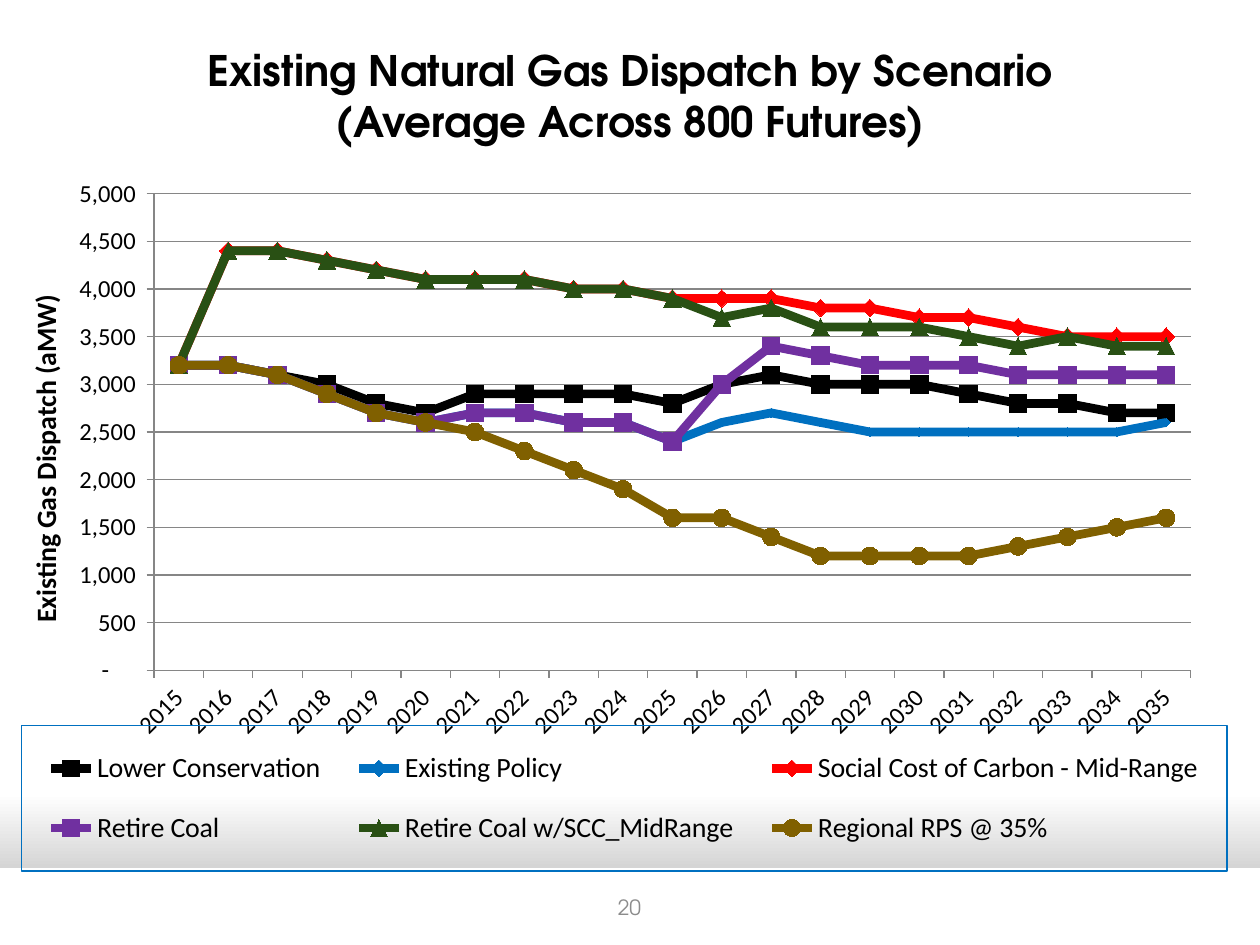
from dataclasses import dataclass

from lxml.etree import SubElement
from pptx import Presentation
from pptx.chart.chart import Chart
from pptx.chart.data import CategoryChartData
from pptx.dml.color import RGBColor
from pptx.enum.chart import XL_CHART_TYPE, XL_LEGEND_POSITION, XL_MARKER_STYLE, XL_TICK_MARK
from pptx.enum.shapes import MSO_SHAPE
from pptx.enum.text import MSO_ANCHOR, PP_ALIGN
from pptx.oxml import parse_xml
from pptx.oxml.ns import nsdecls, qn
from pptx.slide import Slide
from pptx.util import Cm, Pt

BLACK = RGBColor(0x00, 0x00, 0x00)
WHITE = RGBColor(0xFF, 0xFF, 0xFF)
BLUE = RGBColor(0x00, 0x70, 0xC0)
RED = RGBColor(0xFF, 0x00, 0x00)
PURPLE = RGBColor(0x70, 0x30, 0xA0)
GREEN = RGBColor(0x29, 0x50, 0x14)
BROWN = RGBColor(0x80, 0x60, 0x00)
GRID_GRAY = RGBColor(0x86, 0x86, 0x86)
NUMBER_GRAY = RGBColor(0x8C, 0x8C, 0x8C)
SHADE_GRAY = RGBColor(0xA6, 0xA6, 0xA6)

HEADING_FONT = "TeX Gyre Adventor"
CHART_FONT = "Calibri"
TITLE_LINES = ("Existing Natural Gas Dispatch by Scenario", "(Average Across 800 Futures)")
YEARS = range(2015, 2036)
DISPATCH_FORMAT = '_(* #,##0_);_(* \\(#,##0\\);_(* "-"??_);_('


@dataclass(frozen=True)
class Scenario:
    name: str
    color: RGBColor
    marker: XL_MARKER_STYLE
    hundreds: tuple[int, ...]  # dispatch in hundreds of aMW
    marker_size: int = 10


SCENARIOS = (
    Scenario("Lower Conservation", BLACK, XL_MARKER_STYLE.SQUARE,
             (32, 32, 31, 30, 28, 27, 29, 29, 29, 29, 28, 30, 31, 30, 30, 30, 29, 28, 28, 27, 27)),
    Scenario("Existing Policy", BLUE, XL_MARKER_STYLE.DIAMOND,
             (32, 32, 31, 29, 27, 26, 27, 27, 26, 26, 24, 26, 27, 26, 25, 25, 25, 25, 25, 25, 26),
             marker_size=5),
    Scenario("Social Cost of Carbon - Mid-Range", RED, XL_MARKER_STYLE.DIAMOND,
             (32, 44, 44, 43, 42, 41, 41, 41, 40, 40, 39, 39, 39, 38, 38, 37, 37, 36, 35, 35, 35)),
    Scenario("Retire Coal", PURPLE, XL_MARKER_STYLE.SQUARE,
             (32, 32, 31, 29, 27, 26, 27, 27, 26, 26, 24, 30, 34, 33, 32, 32, 32, 31, 31, 31, 31)),
    Scenario("Retire Coal w/SCC_MidRange", GREEN, XL_MARKER_STYLE.TRIANGLE,
             (32, 44, 44, 43, 42, 41, 41, 41, 40, 40, 39, 37, 38, 36, 36, 36, 35, 34, 35, 34, 34)),
    Scenario("Regional RPS @ 35%", BROWN, XL_MARKER_STYLE.CIRCLE,
             (32, 32, 31, 29, 27, 26, 25, 23, 21, 19, 16, 16, 14, 12, 12, 12, 12, 13, 14, 15, 16)),
)


def set_background(slide: Slide) -> None:
    fill = slide.background.fill
    fill.gradient()
    fill.gradient_angle = 270
    for stop, position, color in zip(fill.gradient_stops, (0.84, 1), (WHITE, SHADE_GRAY)):
        stop.position = position
        stop.color.rgb = color


def add_footer_band(slide: Slide) -> None:
    band = slide.shapes.add_shape(MSO_SHAPE.RECTANGLE, Cm(0), Cm(17.5), Cm(25.4), Cm(1.55))
    band.shadow.inherit = False
    band.fill.solid()
    band.fill.fore_color.rgb = WHITE
    band.line.fill.background()


def write_text(shape, lines: tuple[str, ...], size: int, color: RGBColor, bold: bool) -> None:
    """Write centred lines, one run each, parted by line breaks."""
    frame = shape.text_frame
    frame.word_wrap = True
    frame.vertical_anchor = MSO_ANCHOR.MIDDLE
    paragraph = frame.paragraphs[0]
    paragraph.alignment = PP_ALIGN.CENTER
    for index, line in enumerate(lines):
        if index:
            paragraph.add_line_break()
        run = paragraph.add_run()
        run.text = line
        run.font.name = HEADING_FONT
        run.font.size = Pt(size)
        run.font.bold = bold
        run.font.color.rgb = color


def manual_layout(x: float, y: float, width: float, height: float, inner: bool = False):
    """Return a c:layout element with fractions of the chart area."""
    layout = parse_xml(f"<c:layout {nsdecls('c')}><c:manualLayout/></c:layout>")
    settings = {"layoutTarget": "inner"} if inner else {}
    settings |= {"xMode": "edge", "yMode": "edge", "x": x, "y": y, "w": width, "h": height}
    for tag, value in settings.items():
        SubElement(layout[0], qn(f"c:{tag}")).set("val", str(value))
    return layout


def replace_layout(parent, layout, index: int) -> None:
    for old in parent.findall(qn("c:layout")):
        parent.remove(old)
    parent.insert(index, layout)


def format_axes(chart: Chart) -> None:
    for axis in (chart.category_axis, chart.value_axis):
        axis.major_tick_mark = XL_TICK_MARK.OUTSIDE
        axis.minor_tick_mark = XL_TICK_MARK.NONE
        axis.format.line.color.rgb = GRID_GRAY
        axis.tick_labels.font.size = Pt(14)
    labels = chart.category_axis.tick_labels
    labels.font.bold = False
    body = chart.category_axis._element.find(qn("c:txPr")).find(qn("a:bodyPr"))
    body.set("rot", "-2700000")
    body.set("vert", "horz")

    axis = chart.value_axis
    axis.minimum_scale, axis.maximum_scale, axis.major_unit = 0, 5000, 500
    axis.has_major_gridlines = True
    axis.major_gridlines.format.line.color.rgb = GRID_GRAY
    axis.tick_labels.number_format = DISPATCH_FORMAT
    axis.tick_labels.number_format_is_linked = False
    frame = axis.axis_title.text_frame
    run = frame.paragraphs[0].add_run()
    run.text = "Existing Gas Dispatch (aMW)"
    run.font.size = Pt(16)
    run.font.bold = True
    run.font.name = CHART_FONT
    run.font.color.rgb = BLACK


def format_legend(chart: Chart) -> None:
    chart.has_legend = True
    legend = chart.legend
    legend.position = XL_LEGEND_POSITION.BOTTOM
    legend.include_in_layout = False
    legend.font.size = Pt(16)
    element = legend._element
    replace_layout(element, manual_layout(0, 0.79, 1, 0.21), 1)
    border = parse_xml(
        f"<c:spPr {nsdecls('c', 'a')}><a:noFill/><a:ln w='9525'><a:solidFill>"
        f"<a:srgbClr val='{BLUE}'/></a:solidFill></a:ln></c:spPr>")
    element.find(qn("c:txPr")).addprevious(border)


def add_dispatch_chart(slide: Slide) -> None:
    data = CategoryChartData(number_format="#,##0")
    data.categories = [str(year) for year in YEARS]
    for scenario in SCENARIOS:
        data.add_series(scenario.name, [100 * value for value in scenario.hundreds])
    chart = slide.shapes.add_chart(
        XL_CHART_TYPE.LINE_MARKERS, Cm(0.42), Cm(3.6), Cm(24.33), Cm(13.97), data).chart
    chart.has_title = False
    chart.font.name = CHART_FONT
    chart.font.size = Pt(18)
    chart.font.color.rgb = BLACK
    chart.plots[0].vary_by_categories = False
    for series, scenario in zip(chart.plots[0].series, SCENARIOS):
        series.smooth = False
        series.format.line.width = Pt(5)
        series.format.line.color.rgb = scenario.color
        marker = series.marker
        marker.style = scenario.marker
        marker.size = scenario.marker_size
        marker.format.fill.solid()
        marker.format.fill.fore_color.rgb = scenario.color
        marker.format.line.color.rgb = scenario.color
    format_axes(chart)
    format_legend(chart)
    plot_area = chart._chartSpace.chart.plotArea
    replace_layout(plot_area, manual_layout(0.11, 0.02, 0.86, 0.69, inner=True), 0)


def main() -> None:
    presentation = Presentation()
    presentation.slide_width, presentation.slide_height = Cm(25.4), Cm(19.05)
    slide = presentation.slides.add_slide(presentation.slide_layouts[5])
    set_background(slide)
    add_footer_band(slide)

    title = slide.shapes.title
    title.left, title.top, title.width, title.height = Cm(0), Cm(0.43), Cm(25.4), Cm(2.97)
    write_text(title, TITLE_LINES, 24, BLACK, bold=True)

    add_dispatch_chart(slide)
    page_number = slide.shapes.add_textbox(Cm(9.73), Cm(17.78), Cm(5.92), Cm(1.02))
    write_text(page_number, ("20",), 12, NUMBER_GRAY, bold=False)
    presentation.save("out.pptx")


if __name__ == "__main__":
    main()
